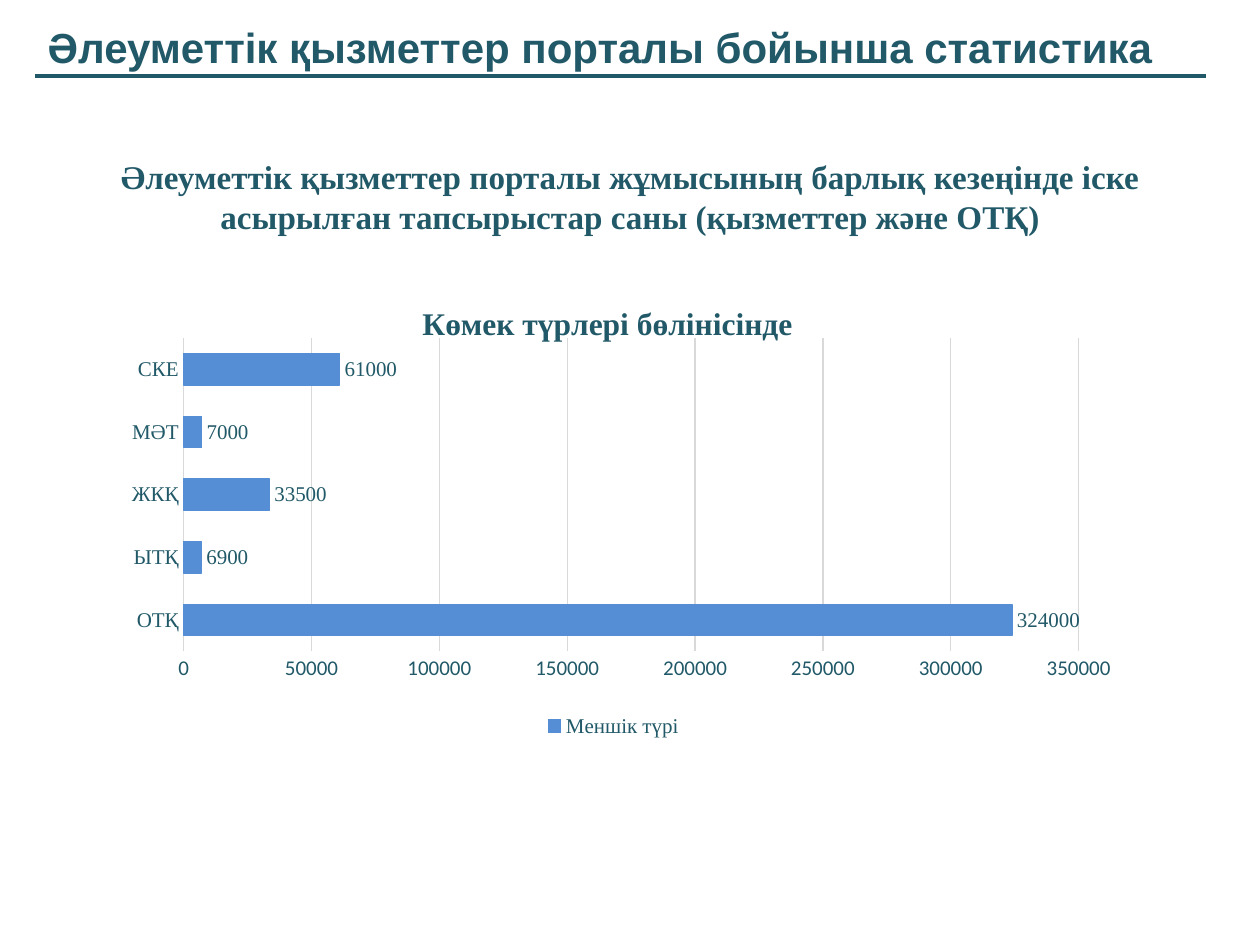
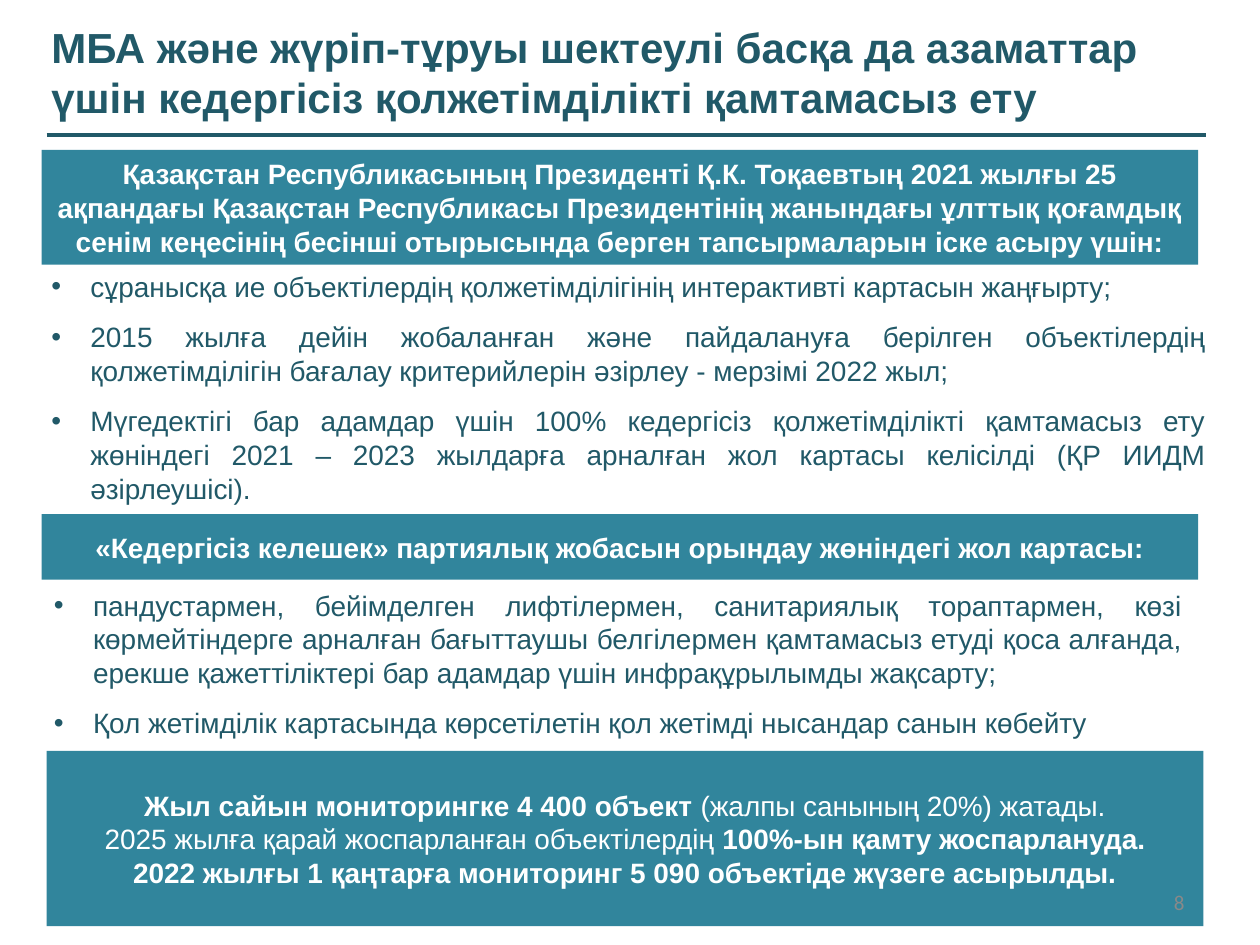
from dataclasses import dataclass

from lxml import etree
from pptx import Presentation
from pptx.chart.data import CategoryChartData
from pptx.dml.color import RGBColor
from pptx.enum import chart as ch, shapes, text as tx
from pptx.oxml import parse_xml
from pptx.oxml.ns import nsdecls, qn
from pptx.util import Inches, Pt


@dataclass(frozen=True)
class Theme:
    ink: str = "215968"
    band: str = "31859C"
    bar: str = "558ED5"
    grid: str = "D9D9D9"
    muted: str = "898989"
    white: str = "FFFFFF"
    sans: str = "Arial"
    serif: str = "Times New Roman"
    plain: str = "Calibri"
    heading: float = 24
    subtitle: float = 18.9
    chart_title: float = 18
    body: float = 16
    small: float = 12
    bullet_gap: float = 9.6


THEME = Theme()
LEFT, CENTER, RIGHT, JUSTIFY = (
    tx.PP_ALIGN.LEFT, tx.PP_ALIGN.CENTER, tx.PP_ALIGN.RIGHT, tx.PP_ALIGN.JUSTIFY)


def rgb(value):
    return RGBColor.from_string(value)


def style_font(font, size, color=THEME.ink, face=THEME.sans, bold=False):
    font.size, font.name, font.bold = Pt(size), face, bold
    font.color.rgb = rgb(color)


def add_bullet(paragraph):
    props = paragraph._p.get_or_add_pPr()
    props.set("marL", str(Inches(0.31)))
    props.set("indent", str(-Inches(0.31)))
    for tag, key, value in (("a:buFont", "typeface", THEME.sans), ("a:buChar", "char", "•")):
        etree.SubElement(props, qn(tag)).set(key, value)


def write_text(frame, paragraphs, size=THEME.body, color=THEME.ink, face=THEME.sans,
               bold=False, align=LEFT, anchor=tx.MSO_ANCHOR.TOP, bullets=False, gap=0):
    frame.word_wrap = True
    frame.vertical_anchor = anchor
    for index, content in enumerate(paragraphs):
        paragraph = frame.add_paragraph() if index else frame.paragraphs[0]
        paragraph.alignment = align
        if index and gap:
            paragraph.space_before = Pt(gap)
        if bullets:
            add_bullet(paragraph)
        runs = [(content, bold)] if isinstance(content, str) else content
        for words, is_bold in runs:
            run = paragraph.add_run()
            run.text = words
            style_font(run.font, size, color, face, is_bold)


def add_text(slide, box, paragraphs, **format_options):
    frame = slide.shapes.add_textbox(*map(Inches, box)).text_frame
    write_text(frame, paragraphs, **format_options)


def add_heading(slide, title, box, rule_left, rule_y):
    add_text(slide, box, [title], size=THEME.heading, bold=True)
    rule = slide.shapes.add_connector(
        shapes.MSO_CONNECTOR.STRAIGHT,
        Inches(rule_left), Inches(rule_y), Inches(9.57), Inches(rule_y))
    rule.line.color.rgb = rgb(THEME.ink)
    rule.line.width = Pt(2.25)
    etree.SubElement(rule._element.spPr, qn("a:effectLst"))


def add_band(slide, left, top, height, paragraphs):
    band = slide.shapes.add_shape(
        shapes.MSO_SHAPE.RECTANGLE, Inches(left), Inches(top), Inches(9.18), Inches(height))
    band.shadow.inherit = False
    band.fill.solid()
    band.fill.fore_color.rgb = rgb(THEME.band)
    band.line.fill.background()
    write_text(band.text_frame, paragraphs, color=THEME.white, bold=True,
               align=CENTER, anchor=tx.MSO_ANCHOR.MIDDLE)


def add_bullets(slide, box, items):
    add_text(slide, box, items, align=JUSTIFY, bullets=True, gap=THEME.bullet_gap)


def manual_layout(**values):
    parts = "".join(f'<c:{key} val="{value}"/>' for key, value in values.items())
    return parse_xml(f'<c:layout {nsdecls("c")}><c:manualLayout>{parts}'
                     '</c:manualLayout></c:layout>')


def set_layout(parent, layout, before):
    for existing in parent.findall(qn("c:layout")):
        parent.remove(existing)
    following = parent.find(qn(before))
    if following is None:
        parent.append(layout)
    else:
        following.addprevious(layout)


def style_axes(chart):
    categories, values = chart.category_axis, chart.value_axis
    for axis, face in ((categories, THEME.serif), (values, THEME.plain)):
        axis.major_tick_mark = axis.minor_tick_mark = ch.XL_TICK_MARK.NONE
        style_font(axis.tick_labels.font, THEME.small, face=face)
    categories.has_major_gridlines = False
    values.minimum_scale, values.maximum_scale, values.major_unit = 0, 350000, 50000
    values.format.line.fill.background()
    for line in (categories.format.line, values.major_gridlines.format.line):
        line.color.rgb = rgb(THEME.grid)
        line.width = Pt(0.75)


def add_orders_chart(slide, box, title, series_name, orders):
    data = CategoryChartData()
    data.categories = list(orders)
    data.add_series(series_name, list(orders.values()))
    chart = slide.shapes.add_chart(
        ch.XL_CHART_TYPE.BAR_CLUSTERED, *map(Inches, box), data).chart
    style_font(chart.font, THEME.small, face=THEME.serif)

    write_text(chart.chart_title.text_frame, [title], size=THEME.chart_title,
               face=THEME.serif, bold=True, align=CENTER)
    set_layout(chart.chart_title._element,
               manual_layout(xMode="edge", yMode="edge", x=0.31, y=0.05), "c:overlay")
    plot_area = chart._chartSpace.chart.plotArea
    set_layout(plot_area, manual_layout(
        layoutTarget="inner", xMode="edge", yMode="edge",
        x=0.085, y=0.136, w=0.864, h=0.67), "c:barChart")

    style_axes(chart)
    chart.has_legend = True
    chart.legend.position = ch.XL_LEGEND_POSITION.BOTTOM
    chart.legend.include_in_layout = False
    style_font(chart.legend.font, THEME.small, face=THEME.serif)

    plot = chart.plots[0]
    plot.gap_width = 100
    plot.vary_by_categories = False
    series = plot.series[0]
    series.format.fill.solid()
    series.format.fill.fore_color.rgb = rgb(THEME.bar)
    series.format.line.color.rgb = rgb(THEME.bar)
    series.format.line.width = Pt(0.75)
    labels = series.data_labels
    labels.show_value = True
    labels.position = ch.XL_LABEL_POSITION.OUTSIDE_END
    style_font(labels.font, THEME.small, face=THEME.serif)


def build_statistics(slide):
    add_text(slide, (0.76, 1.01, 8.49, 1.09),
             ["Әлеуметтік қызметтер порталы жұмысының барлық кезеңінде іске асырылған "
              "тапсырыстар саны (қызметтер және ОТҚ)"],
             size=THEME.subtitle, face=THEME.serif, bold=True,
             align=CENTER, anchor=tx.MSO_ANCHOR.MIDDLE)
    add_orders_chart(slide, (0.76, 2.18, 8.22, 3.71), "Көмек түрлері бөлінісінде",
                     "Меншік түрі",
                     {"ОТҚ": 324000, "ЫТҚ": 6900, "ЖКҚ": 33500, "МӘТ": 7000, "СКЕ": 61000})
    add_heading(slide, "Әлеуметтік қызметтер порталы бойынша статистика",
                (0.28, 0.12, 9.45, 0.5), 0.28, 0.6)


def build_accessibility(slide):
    add_heading(slide, "МБА және жүріп-тұруы шектеулі басқа да азаматтар үшін "
                "кедергісіз қолжетімділікті қамтамасыз ету",
                (0.31, 0.12, 9.36, 0.91), 0.37, 1.07)
    add_band(slide, 0.33, 1.19, 0.91, [
        "Қазақстан Республикасының Президенті Қ.К. Тоқаевтың 2021 жылғы 25 ақпандағы "
        "Қазақстан Республикасы Президентінің жанындағы ұлттық қоғамдық сенім кеңесінің "
        "бесінші отырысында берген тапсырмаларын іске асыру үшін:"])
    add_bullets(slide, (0.31, 2.09, 9.36, 1.99), [
        "сұранысқа ие объектілердің қолжетімділігінің интерактивті картасын жаңғырту;",
        "2015 жылға дейін жобаланған және пайдалануға берілген объектілердің "
        "қолжетімділігін бағалау критерийлерін әзірлеу - мерзімі 2022 жыл;",
        "Мүгедектігі бар адамдар үшін 100% кедергісіз қолжетімділікті қамтамасыз ету "
        "жөніндегі 2021 – 2023 жылдарға арналған жол картасы келісілді "
        "(ҚР ИИДМ әзірлеушісі)."])
    add_band(slide, 0.33, 4.08, 0.52, [
        "«Кедергісіз келешек» партиялық жобасын орындау жөніндегі жол картасы:"])
    add_bullets(slide, (0.33, 4.62, 9.15, 1.31), [
        "пандустармен, бейімделген лифтілермен, санитариялық тораптармен, көзі "
        "көрмейтіндерге арналған бағыттаушы белгілермен қамтамасыз етуді қоса алғанда, "
        "ерекше қажеттіліктері бар адамдар үшін инфрақұрылымды жақсарту;",
        "Қол жетімділік картасында көрсетілетін қол жетімді нысандар санын көбейту"])
    add_band(slide, 0.37, 5.96, 1.39, [
        [("Жыл сайын мониторингке 4 400 объект ", True),
         ("(жалпы санының 20%) жатады.", False)],
        [("2025 жылға қарай жоспарланған объектілердің ", False),
         ("100%-ын қамту жоспарлануда.", True)],
        "2022 жылғы 1 қаңтарға мониторинг 5 090 объектіде жүзеге асырылды."])
    add_text(slide, (7.17, 6.96, 2.33, 0.4), ["8"], size=THEME.small, color=THEME.muted,
             face=THEME.plain, align=RIGHT, anchor=tx.MSO_ANCHOR.MIDDLE)


def main():
    deck = Presentation()
    deck.slide_width, deck.slide_height = Inches(10), Inches(7.5)
    for build in (build_statistics, build_accessibility):
        build(deck.slides.add_slide(deck.slide_layouts[6]))
    deck.save("out.pptx")


if __name__ == "__main__":
    main()
